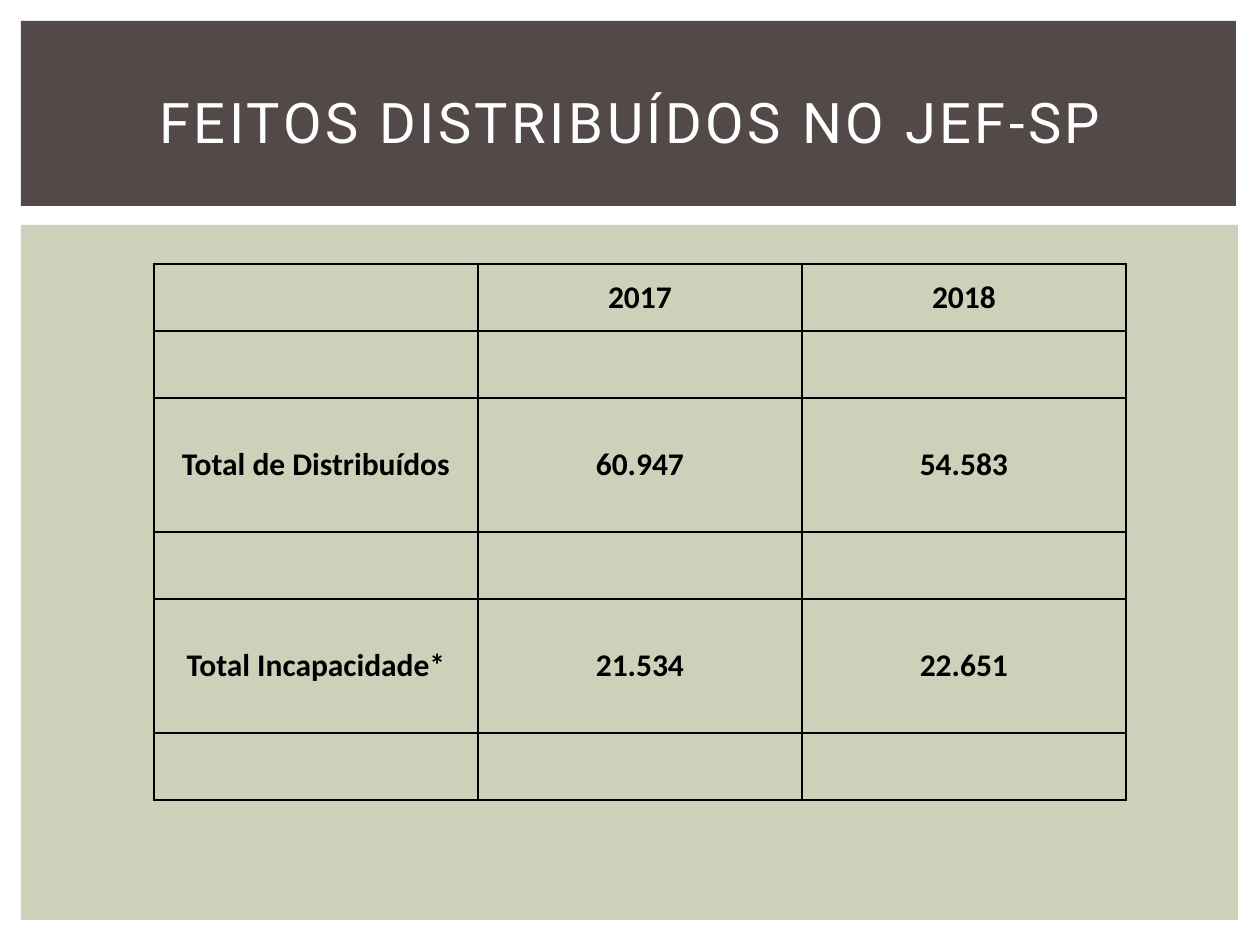
from lxml import etree
from pptx import Presentation
from pptx.dml.color import RGBColor
from pptx.enum.shapes import MSO_SHAPE
from pptx.enum.text import MSO_ANCHOR, PP_ALIGN
from pptx.oxml.ns import qn
from pptx.util import Emu, Pt

RECTANGLE = MSO_SHAPE.RECTANGLE
MIDDLE = MSO_ANCHOR.MIDDLE
CENTER = PP_ALIGN.CENTER

PX_PER_INCH = 126
BLACK, WHITE, BROWN, SAGE = "000000", "FFFFFF", "534949", "CCD1B9"

UNIT_HEIGHT = 67
ROWS = [
    (1, ["", "2017", "2018"]),
    (1, ["", "", ""]),
    (2, ["Total de Distribuídos", "60.947", "54.583"]),
    (1, ["", "", ""]),
    (2, ["Total Incapacidade*", "21.534", "22.651"]),
    (1, ["", "", ""]),
]


def px(length):
    return Emu(round(length * 914400 / PX_PER_INCH))


def color(hex_string):
    return RGBColor.from_string(hex_string)


def add_panel(slide, left, top, width, height, fill):
    shape = slide.shapes.add_shape(RECTANGLE, px(left), px(top), px(width), px(height))
    shape.shadow.inherit = False
    shape.fill.solid()
    shape.fill.fore_color.rgb = color(fill)
    shape.line.fill.background()


def style_paragraph(paragraph, font_name, size, hex_string, bold=False):
    paragraph.alignment = CENTER
    paragraph.font.name = font_name
    paragraph.font.size = Pt(size)
    paragraph.font.bold = bold
    paragraph.font.color.rgb = color(hex_string)


def add_header(slide, left, top, width, height):
    add_panel(slide, left, top, width, height, BROWN)
    box = slide.shapes.add_textbox(px(left + 32), px(top + 28), px(width - 60), px(145))
    frame = box.text_frame
    frame.word_wrap = True
    frame.vertical_anchor = MIDDLE
    paragraph = frame.paragraphs[0]
    run = paragraph.add_run()
    run.text = "FEITOS DISTRIBUÍDOS NO JEF-SP"
    style_paragraph(paragraph, "Roboto", 32, WHITE)
    run.font._element.set("spc", "200")


def add_borders(cell):
    properties = cell._tc.get_or_add_tcPr()
    for position, side in enumerate(("a:lnL", "a:lnR", "a:lnT", "a:lnB")):
        line = etree.Element(qn(side), w=str(Pt(1)))
        fill = etree.SubElement(line, qn("a:solidFill"))
        etree.SubElement(fill, qn("a:srgbClr"), val=BLACK)
        properties.insert(position, line)


def fill_cell(cell, text):
    cell.fill.background()
    add_borders(cell)
    cell.vertical_anchor = MIDDLE
    cell.margin_left = cell.margin_right = px(9)
    cell.margin_top = cell.margin_bottom = 0
    cell.text = text
    style_paragraph(cell.text_frame.paragraphs[0], "Calibri", 18, BLACK, bold=True)


def add_case_table(slide, left, top, width):
    column_count = len(ROWS[0][1])
    height = UNIT_HEIGHT * sum(units for units, _ in ROWS)
    frame = slide.shapes.add_table(
        len(ROWS), column_count, px(left), px(top), px(width), px(height))
    table = frame.table
    table.first_row = table.horz_banding = False
    for column in table.columns:
        column.width = px(width / column_count)
    for row, (units, texts) in zip(table.rows, ROWS):
        row.height = px(units * UNIT_HEIGHT)
        for cell, text in zip(row.cells, texts):
            fill_cell(cell, text)


def add_body(slide, left, top, width, height):
    add_panel(slide, left, top, width, height, SAGE)
    add_case_table(slide, left + 133, top + 39, 972)


def main():
    presentation = Presentation()
    presentation.slide_width = px(1260)
    presentation.slide_height = px(945)
    slide = presentation.slides.add_slide(presentation.slide_layouts[6])
    add_body(slide, 21, 225, 1217, 695)
    add_header(slide, 21, 21, 1215, 185)
    presentation.save("out.pptx")


if __name__ == "__main__":
    main()
